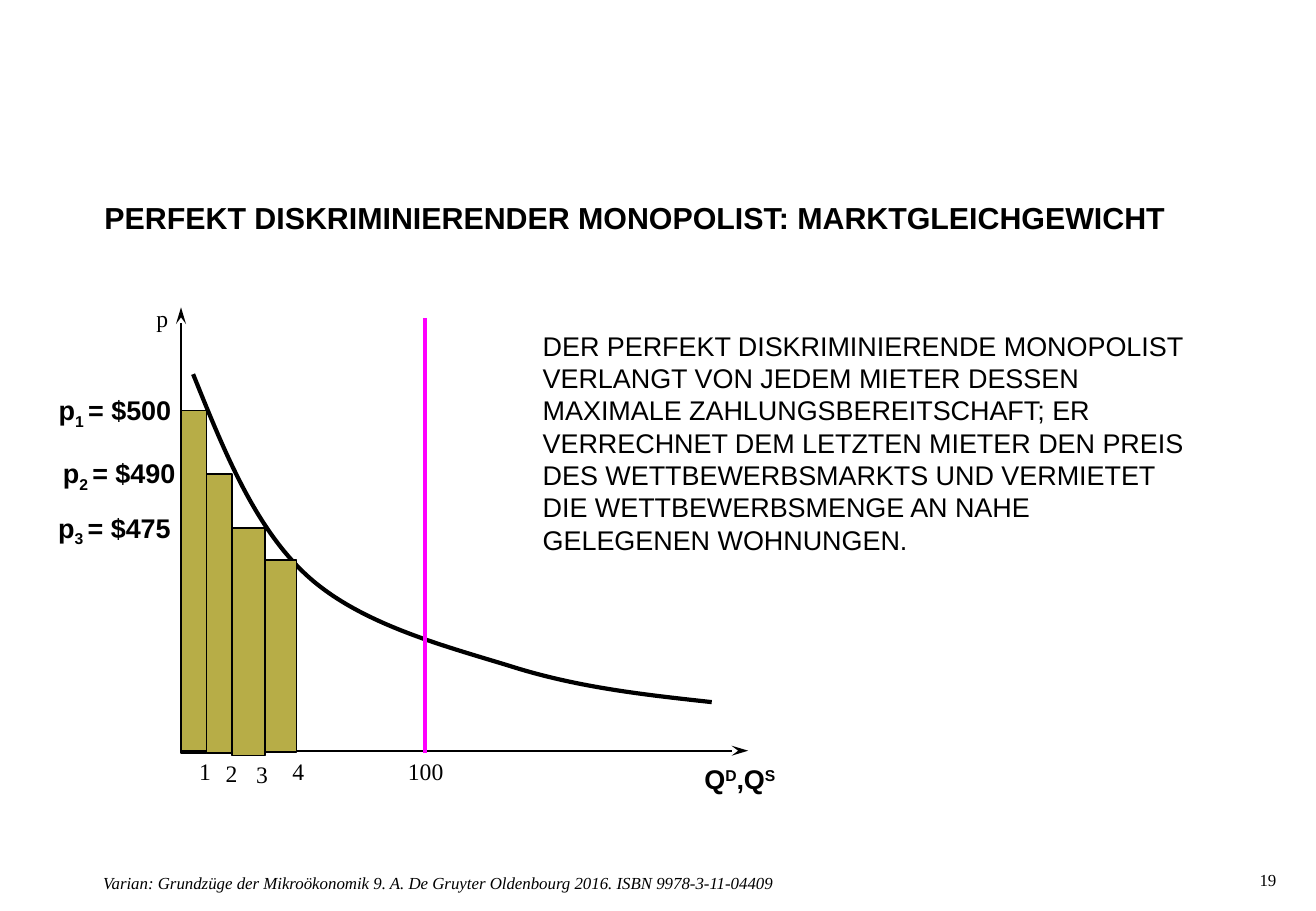
from dataclasses import dataclass
from itertools import pairwise

from lxml import etree
from pptx import Presentation
from pptx.dml.color import RGBColor
from pptx.enum.shapes import MSO_CONNECTOR, MSO_SHAPE
from pptx.enum.text import MSO_AUTO_SIZE
from pptx.oxml.ns import qn
from pptx.shapes.base import BaseShape
from pptx.slide import Slide
from pptx.util import Pt

RECTANGLE = MSO_SHAPE.RECTANGLE
STRAIGHT = MSO_CONNECTOR.STRAIGHT
FIT_SHAPE = MSO_AUTO_SIZE.SHAPE_TO_FIT_TEXT
NO_FIT = MSO_AUTO_SIZE.NONE
SANS = "Arial"
SERIF = "Times New Roman"
BLACK = "000000"
OLIVE = "B7AD47"
MAGENTA = "FF00FF"
SUPERSCRIPT = 30000
SUBSCRIPT = -25000
LABEL_INSETS = (7.2, 3.6, 7.2, 3.6)
NO_INSETS = (0, 0, 0, 0)


@dataclass(frozen=True)
class TextRun:
    text: str
    baseline: int = 0


@dataclass(frozen=True)
class Label:
    left: float
    top: float
    width: float
    height: float
    runs: tuple[TextRun, ...]
    size: float = 14
    font: str = SERIF
    bold: bool = False
    italic: bool = False
    wrap: bool = False
    insets: tuple[float, ...] = LABEL_INSETS


@dataclass(frozen=True)
class Bar:
    left: float
    right: float
    top: float
    bottom: float


@dataclass(frozen=True)
class Line:
    start: tuple[float, float]
    end: tuple[float, float]
    color: str = BLACK
    width: float = 1
    arrow: bool = False


def price_label(left: float, top: float, index: int, price: int) -> Label:
    runs = (TextRun("p"), TextRun(f"{index} ", SUBSCRIPT), TextRun(f"= ${price}"))
    return Label(left, top, 84.5, 26.6, runs, 16, SANS, bold=True)


def tick_label(left: float, top: float, text: str, width: float = 21.6) -> Label:
    return Label(left, top, width, 24.5, (TextRun(text),))


BAR_EDGES = (107.3, 122.4, 137.5, 157, 175.7)
BAR_TOPS = (243.4, 280.8, 313.2, 331.9)
BAR_BOTTOMS = (446.4, 446.4, 447.8, 445.7)
BARS = [
    Bar(left, right, top, bottom)
    for (left, right), top, bottom in zip(pairwise(BAR_EDGES), BAR_TOPS, BAR_BOTTOMS)
]

AXES = (
    Line((107.3, 446.4), (107.3, 182.2), arrow=True),
    Line((107.3, 445), (443.5, 445), arrow=True),
)
SUPPLY = Line((252, 446.4), (252, 188.6), MAGENTA, 2.5)
DEMAND_POINTS = (
    (114.5, 221.8),
    (132.5, 266.4), (150.5, 311.8), (181.4, 340.6),
    (212.4, 369.4), (261.4, 382.3), (301.7, 394.6),
    (342, 407.5), (381.6, 411.8), (421.9, 416.2),
)

LABELS = (
    Label(
        61.9, 118.1, 684.7, 38.9,
        (TextRun("PERFEKT DISKRIMINIERENDER MONOPOLIST: MARKTGLEICHGEWICHT"),),
        18, SANS, bold=True, wrap=True, insets=(0, 0, 11.5, 0),
    ),
    Label(746.6, 515.5, 28.1, 14.4, (TextRun("19"),), 10, wrap=True, insets=NO_INSETS),
    Label(
        61.2, 517, 676.8, 14.4,
        (TextRun("Varian: Grundzüge der Mikroökonomik 9. A. De Gruyter Oldenbourg 2016. "
                 "ISBN 9978-3-11-04409"),),
        10, italic=True, wrap=True, insets=NO_INSETS,
    ),
    tick_label(234.7, 445, "100", 36),
    tick_label(110.9, 445, "1"),
    tick_label(126.7, 446.4, "2"),
    tick_label(144.7, 447.1, "3"),
    tick_label(166.3, 445, "4"),
    tick_label(85.7, 176.4, "p"),
    Label(
        410.4, 448.6, 59, 26.6,
        (TextRun("Q"), TextRun("D", SUPERSCRIPT), TextRun(",Q"), TextRun("S", SUPERSCRIPT)),
        16, SANS, bold=True,
    ),
    price_label(27.7, 229.7, 1, 500),
    price_label(30.2, 267.1, 2, 490),
    price_label(27.4, 299.5, 3, 475),
    Label(
        314.6, 191.5, 394.6, 143.3,
        (TextRun("DER PERFEKT DISKRIMINIERENDE MONOPOLIST VERLANGT VON JEDEM MIETER DESSEN "
                 "MAXIMALE ZAHLUNGSBEREITSCHAFT; ER VERRECHNET DEM LETZTEN MIETER DEN PREIS "
                 "DES WETTBEWERBSMARKTS UND VERMIETET DIE WETTBEWERBSMENGE AN NAHE "
                 "GELEGENEN WOHNUNGEN."),),
        16, SANS, wrap=True,
    ),
)


def rgb(color: str) -> RGBColor:
    return RGBColor.from_string(color)


def style_line(shape: BaseShape, color: str, width: float) -> None:
    shape.line.color.rgb = rgb(color)
    shape.line.width = Pt(width)


def draw_bar(slide: Slide, bar: Bar) -> None:
    shape = slide.shapes.add_shape(
        RECTANGLE, Pt(bar.left), Pt(bar.top), Pt(bar.right - bar.left), Pt(bar.bottom - bar.top)
    )
    shape.shadow.inherit = False
    shape.fill.solid()
    shape.fill.fore_color.rgb = rgb(OLIVE)
    style_line(shape, BLACK, 1)


def draw_line(slide: Slide, line: Line) -> None:
    connector = slide.shapes.add_connector(STRAIGHT, *map(Pt, line.start + line.end))
    style_line(connector, line.color, line.width)
    if line.arrow:
        outline = connector.line._get_or_add_ln()
        etree.SubElement(outline, qn("a:tailEnd"), type="stealth", w="med", len="lg")
    etree.SubElement(connector._element.spPr, qn("a:effectLst"))


def draw_demand_curve(slide: Slide) -> None:
    start, *points = DEMAND_POINTS
    builder = slide.shapes.build_freeform(Pt(start[0]), Pt(start[1]))
    builder.add_line_segments([(Pt(x), Pt(y)) for x, y in points], close=False)
    shape = builder.convert_to_shape()
    shape.shadow.inherit = False
    shape.fill.background()
    style_line(shape, BLACK, 2.5)
    outline = shape._element.find(".//" + qn("a:path"))
    segments = outline.findall(qn("a:lnTo"))
    for first in range(0, len(segments), 3):
        curve = etree.SubElement(outline, qn("a:cubicBezTo"))
        for segment in segments[first:first + 3]:
            curve.append(segment[0])
            outline.remove(segment)


def draw_label(slide: Slide, label: Label) -> None:
    box = slide.shapes.add_textbox(
        Pt(label.left), Pt(label.top), Pt(label.width), Pt(label.height)
    )
    frame = box.text_frame
    frame.word_wrap = label.wrap
    frame.auto_size = FIT_SHAPE if label.insets == LABEL_INSETS else NO_FIT
    frame.margin_left, frame.margin_top, frame.margin_right, frame.margin_bottom = map(
        Pt, label.insets
    )
    paragraph = frame.paragraphs[0]
    for text_run in label.runs:
        run = paragraph.add_run()
        run.text = text_run.text
        run.font.name = label.font
        run.font.size = Pt(label.size)
        run.font.bold = label.bold
        run.font.italic = label.italic
        run.font.color.rgb = rgb(BLACK)
        if text_run.baseline:
            run._r.get_or_add_rPr().set("baseline", str(text_run.baseline))


def main() -> None:
    presentation = Presentation()
    presentation.slide_width = Pt(780)
    presentation.slide_height = Pt(540)
    slide = presentation.slides.add_slide(presentation.slide_layouts[6])
    first_bar, *other_bars = BARS
    draw_bar(slide, first_bar)
    for axis in AXES:
        draw_line(slide, axis)
    draw_demand_curve(slide)
    for bar in other_bars:
        draw_bar(slide, bar)
    draw_line(slide, SUPPLY)
    for label in LABELS:
        draw_label(slide, label)
    presentation.save("out.pptx")


if __name__ == "__main__":
    main()
